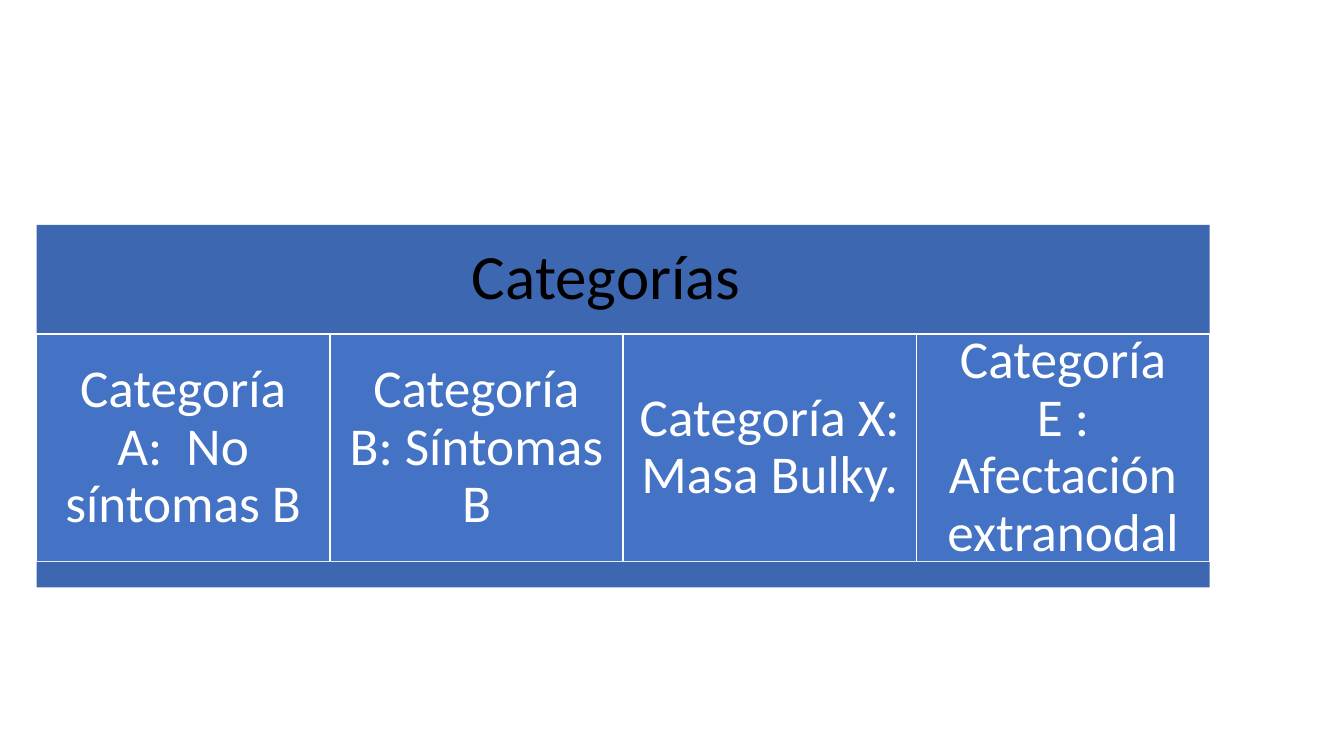
from pptx import Presentation
from pptx.dml.color import RGBColor
from pptx.enum.shapes import MSO_SHAPE
from pptx.enum.text import MSO_ANCHOR, PP_ALIGN
from pptx.util import Pt

RECT = MSO_SHAPE.RECTANGLE
MIDDLE = MSO_ANCHOR.MIDDLE
CENTER = PP_ALIGN.CENTER

TITLE = "Categorías\t"
# Non-breaking spaces keep each letter with its colon or the word after it.
CATEGORIES = [
    "Categoría A:  No síntomas B",
    "Categoría B: Síntomas B",
    "Categoría X: Masa Bulky.",
    "Categoría E : Afectación extranodal",
]

THEME = {
    "font": "Calibri",
    "band": RGBColor(0x3E, 0x67, 0xB2),
    "cell": RGBColor(0x44, 0x72, 0xC4),
    "line": RGBColor(0xFF, 0xFF, 0xFF),
    "title_text": RGBColor(0, 0, 0),
    "cell_text": RGBColor(0xFF, 0xFF, 0xFF),
    "title_size": 45,
    "cell_size": 38,
}

LEFT, TOP, WIDTH = 26.1, 160.6, 838
HEADER_H, CELL_H, FOOTER_H = 77.9, 162.9, 18.1


def add_box(slide, left, top, width, height, fill, line=None):
    sp = slide.shapes.add_shape(RECT, Pt(left), Pt(top), Pt(width), Pt(height))
    sp.shadow.inherit = False
    sp.fill.solid()
    sp.fill.fore_color.rgb = fill
    if line is None:
        sp.line.fill.background()
    else:
        sp.line.color.rgb = line
        sp.line.width = Pt(1)
    return sp


def write(sp, text, size, color, inset):
    tf = sp.text_frame
    tf.word_wrap = True
    tf.vertical_anchor = MIDDLE
    tf.margin_left = tf.margin_right = Pt(inset)
    tf.margin_top = tf.margin_bottom = Pt(inset)
    tf.text = text
    p = tf.paragraphs[0]
    p.alignment = CENTER
    p.line_spacing = 0.9
    font = p.runs[0].font
    font.name = THEME["font"]
    font.size = Pt(size)
    font.color.rgb = color


def main():
    prs = Presentation()
    prs.slide_width, prs.slide_height = Pt(960), Pt(540)
    s = prs.slides.add_slide(prs.slide_layouts[6])

    header = add_box(s, LEFT, TOP, WIDTH, HEADER_H, THEME["band"])
    write(header, TITLE, THEME["title_size"], THEME["title_text"], 13.5)

    cell_top = TOP + HEADER_H
    cell_w = WIDTH / len(CATEGORIES)
    for i, category in enumerate(CATEGORIES):
        cell = add_box(s, LEFT + i * cell_w, cell_top, cell_w, CELL_H,
                       THEME["cell"], THEME["line"])
        write(cell, category, THEME["cell_size"], THEME["cell_text"], 11.4)

    add_box(s, LEFT, cell_top + CELL_H, WIDTH, FOOTER_H, THEME["band"])
    prs.save("out.pptx")


if __name__ == "__main__":
    main()
